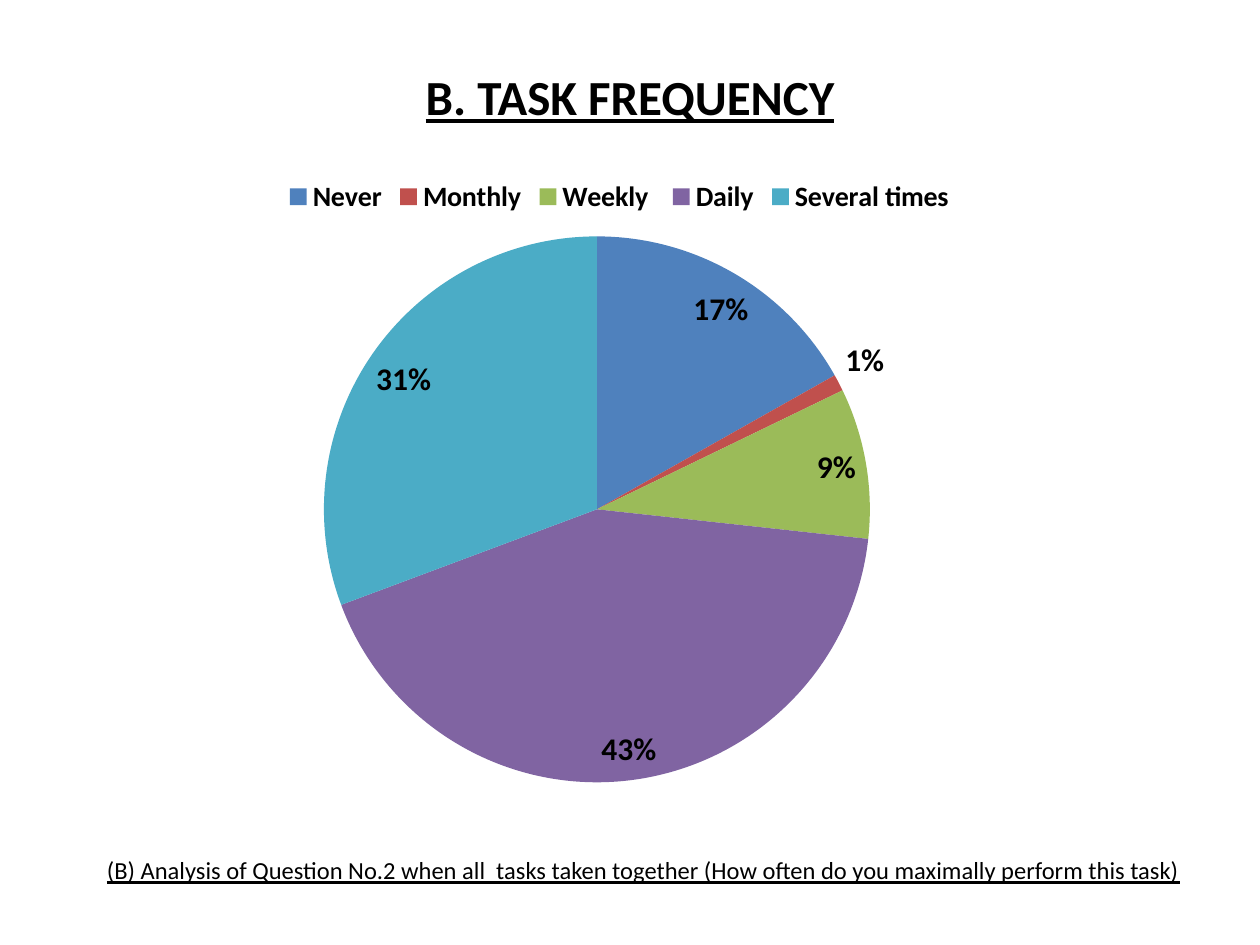
"""Build a slide with a pie chart of task frequency."""
from dataclasses import dataclass

from lxml import etree
from pptx import Presentation
from pptx import util as u
from pptx.chart import data as chart_data
from pptx.dml import color
from pptx.enum import chart as charts, text
from pptx.oxml import ns


@dataclass(frozen=True)
class Theme:
    font: str = "Calibri"
    ink: str = "000000"
    title: float = 28
    caption: float = 14
    chart: float = 10
    legend: float = 16
    label: float = 18


@dataclass(frozen=True)
class Area:
    left: float
    top: float
    width: float
    height: float

    def lengths(self) -> list[u.Length]:
        return [u.Pt(value) for value in (self.left, self.top, self.width, self.height)]


@dataclass(frozen=True)
class Line:
    words: str
    area: Area
    size: float
    bold: bool = False
    wrap: bool = True
    align: text.PP_ALIGN = text.PP_ALIGN.LEFT
    anchor: text.MSO_ANCHOR = text.MSO_ANCHOR.TOP


@dataclass(frozen=True)
class Slice:
    name: str
    percent: int
    fill: str


THEME = Theme()
LINES = [
    Line("B. TASK FREQUENCY", Area(36, 21.6, 648, 67), THEME.title, bold=True,
         align=text.PP_ALIGN.CENTER, anchor=text.MSO_ANCHOR.MIDDLE),
    Line("(B) Analysis of Question No.2 when all  tasks taken together "
         "(How often do you maximally perform this task)",
         Area(54, 485.3, 630, 24.5), THEME.caption, wrap=False),
]
SLICES = [
    Slice("Never", 17, "4F81BD"),
    Slice("Monthly", 1, "C0504D"),
    Slice("Weekly ", 9, "9BBB59"),
    Slice("Daily", 43, "8064A2"),
    Slice("Several times", 31, "4BACC6"),
]
CHART_AREA = Area(36, 94.3, 635.8, 362.9)
PIE_AREA = Area(149.1, 40.8, 312, 312)


def style_font(font, size: float, bold: bool = False) -> None:
    """Apply the theme's face and ink at the given size."""
    font.name = THEME.font
    font.size = u.Pt(size)
    font.bold = bold
    font.color.rgb = color.RGBColor.from_string(THEME.ink)


def draw_line(page, line: Line) -> None:
    """Draw one underlined line of text."""
    box = page.shapes.add_textbox(*line.area.lengths())
    frame = box.text_frame
    frame.word_wrap = line.wrap
    frame.vertical_anchor = line.anchor
    para = frame.paragraphs[0]
    para.alignment = line.align
    span = para.add_run()
    span.text = line.words
    style_font(span.font, line.size, line.bold)
    span.font.underline = True


def place_plot(chart, plot: Area, frame: Area) -> None:
    """Fix the plot's inner area as fractions of the chart frame."""
    plot_area = chart.plots[0]._element.getparent()
    for old in plot_area.findall(ns.qn("c:layout")):
        plot_area.remove(old)
    layout = etree.Element(ns.qn("c:layout"))
    manual = etree.SubElement(layout, ns.qn("c:manualLayout"))
    settings = {
        "layoutTarget": "inner", "xMode": "edge", "yMode": "edge",
        "x": plot.left / frame.width, "y": plot.top / frame.height,
        "w": plot.width / frame.width, "h": plot.height / frame.height,
    }
    for name, value in settings.items():
        etree.SubElement(manual, ns.qn(f"c:{name}")).set("val", str(value))
    plot_area.insert(0, layout)


def draw_pie(page, slices: list[Slice]) -> None:
    """Draw the pie with its legend and percentage labels."""
    data = chart_data.CategoryChartData()
    data.categories = [part.name for part in slices]
    data.add_series("Series 1", [part.percent for part in slices])
    chart = page.shapes.add_chart(
        charts.XL_CHART_TYPE.PIE, *CHART_AREA.lengths(), data).chart
    style_font(chart.font, THEME.chart)
    chart.has_title = False
    chart.has_legend = True
    chart.legend.position = charts.XL_LEGEND_POSITION.TOP
    chart.legend.include_in_layout = False
    style_font(chart.legend.font, THEME.legend, bold=True)

    pie = chart.plots[0]
    pie.vary_by_categories = True
    for index, part in enumerate(slices):
        fill = pie.series[0].points[index].format.fill
        fill.solid()
        fill.fore_color.rgb = color.RGBColor.from_string(part.fill)
    pie.has_data_labels = True
    labels = pie.data_labels
    labels.show_value = False
    labels.show_percentage = True
    labels.number_format = "0%"
    labels.number_format_is_linked = False
    labels.position = charts.XL_LABEL_POSITION.BEST_FIT
    style_font(labels.font, THEME.label, bold=True)
    place_plot(chart, PIE_AREA, CHART_AREA)


def main() -> None:
    """Build and save the deck."""
    deck = Presentation()
    deck.slide_width, deck.slide_height = u.Pt(720), u.Pt(540)
    page = deck.slides.add_slide(deck.slide_layouts[6])
    draw_pie(page, SLICES)
    for line in LINES:
        draw_line(page, line)
    deck.save("out.pptx")


if __name__ == "__main__":
    main()
